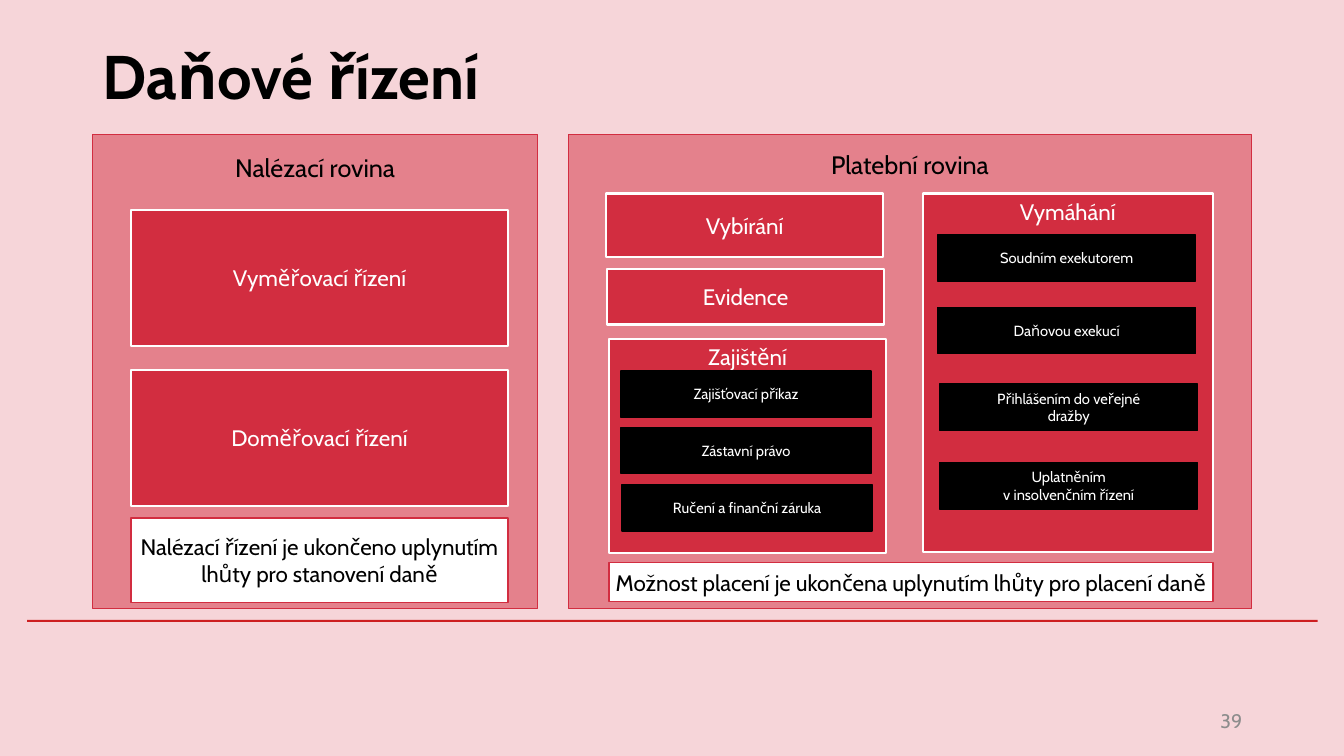
from pptx import Presentation
from pptx.dml.color import RGBColor
from pptx.enum.shapes import MSO_SHAPE
from pptx.enum.text import MSO_ANCHOR, PP_ALIGN
from pptx.util import Inches, Pt

RED, PINK, WHITE, BLACK = "D22D40", "E4818C", "FFFFFF", "000000"


def style_text(sp, text, size, color, align=PP_ALIGN.CENTER, bold=False,
               anchor=MSO_ANCHOR.MIDDLE, wrap=True, top=0.05):
    tf = sp.text_frame
    tf.text = text
    tf.word_wrap = wrap
    tf.vertical_anchor = anchor
    tf.margin_top = Inches(top)
    for p in tf.paragraphs:
        p.alignment = align
        p.font.name = "Cabin"
        p.font.size = Pt(size)
        p.font.bold = bold
        p.font.color.rgb = RGBColor.from_string(color)


def add_box(x, y, w, h, fill, line=None, weight=1):
    sp = s.shapes.add_shape(MSO_SHAPE.RECTANGLE, Inches(x), Inches(y), Inches(w), Inches(h))
    sp.shadow.inherit = False
    sp.fill.solid()
    sp.fill.fore_color.rgb = RGBColor.from_string(fill)
    if line:
        sp.line.color.rgb = RGBColor.from_string(line)
        sp.line.width = Pt(weight)
    else:
        sp.line.fill.background()
    return sp


prs = Presentation()
prs.slide_width, prs.slide_height = Inches(13.33), Inches(7.5)
s = prs.slides.add_slide(prs.slide_layouts[6])
s.background.fill.solid()
s.background.fill.fore_color.rgb = RGBColor.from_string("F6D5D9")

add_box(0.27, 6.15, 12.8, 0.02, "CD1F21")

title = s.shapes.add_textbox(Inches(0.92), Inches(0.02), Inches(11.5), Inches(1.45))
style_text(title, "Daňové řízení", 44, BLACK, PP_ALIGN.LEFT, bold=True)
number = s.shapes.add_textbox(Inches(9.42), Inches(6.95), Inches(3), Inches(0.4))
style_text(number, "39", 14, "8C8C8C", PP_ALIGN.RIGHT)

# The two planes of the proceedings
for x, w, top, text in [(0.92, 4.41, 0.18, "Nalézací rovina"),
                        (5.64, 6.77, 0.15, "Platební rovina")]:
    style_text(add_box(x, 1.33, w, 4.71, PINK, RED, 0.5), text, 18, BLACK,
               anchor=MSO_ANCHOR.TOP, top=top)

# Stages within each plane
for x, y, w, h, anchor, text in [
    (1.3, 2.08, 3.74, 1.35, MSO_ANCHOR.MIDDLE, "Vyměřovací řízení"),
    (1.3, 3.67, 3.74, 1.35, MSO_ANCHOR.MIDDLE, "Doměřovací řízení"),
    (6.01, 1.92, 2.75, 0.63, MSO_ANCHOR.MIDDLE, "Vybírání"),
    (6.02, 2.67, 2.75, 0.55, MSO_ANCHOR.MIDDLE, "Evidence"),
    (6.04, 3.36, 2.75, 2.13, MSO_ANCHOR.TOP, "Zajištění"),
    (9.15, 1.92, 2.88, 3.56, MSO_ANCHOR.TOP, "Vymáhání"),
]:
    style_text(add_box(x, y, w, h, RED, WHITE, 1.5), text, 16, WHITE, anchor=anchor)

# Instruments of securing and enforcement
for x, y, w, text in [
    (6.16, 3.68, 2.48, "Zajišťovací příkaz"),
    (6.16, 4.24, 2.48, "Zástavní právo"),
    (6.17, 4.81, 2.48, "Ručení a finanční záruka"),
    (9.3, 2.33, 2.56, "Soudním exekutorem"),
    (9.3, 3.05, 2.56, "Daňovou exekucí"),
    (9.32, 3.81, 2.56, "Přihlášením do veřejné\ndražby"),
    (9.32, 4.59, 2.56, "Uplatněním\nv insolvenčním řízení"),
]:
    style_text(add_box(x, y, w, 0.46, BLACK, BLACK), text, 10.5, WHITE, wrap=False)

# How each plane ends
for x, y, w, h, text in [
    (1.3, 5.14, 3.74, 0.84, "Nalézací řízení je ukončeno uplynutím\nlhůty pro stanovení daně"),
    (6.04, 5.58, 5.99, 0.39, "Možnost placení je ukončena uplynutím lhůty pro placení daně"),
]:
    style_text(add_box(x, y, w, h, WHITE, RED), text, 16, BLACK, wrap=False)

prs.save("out.pptx")
